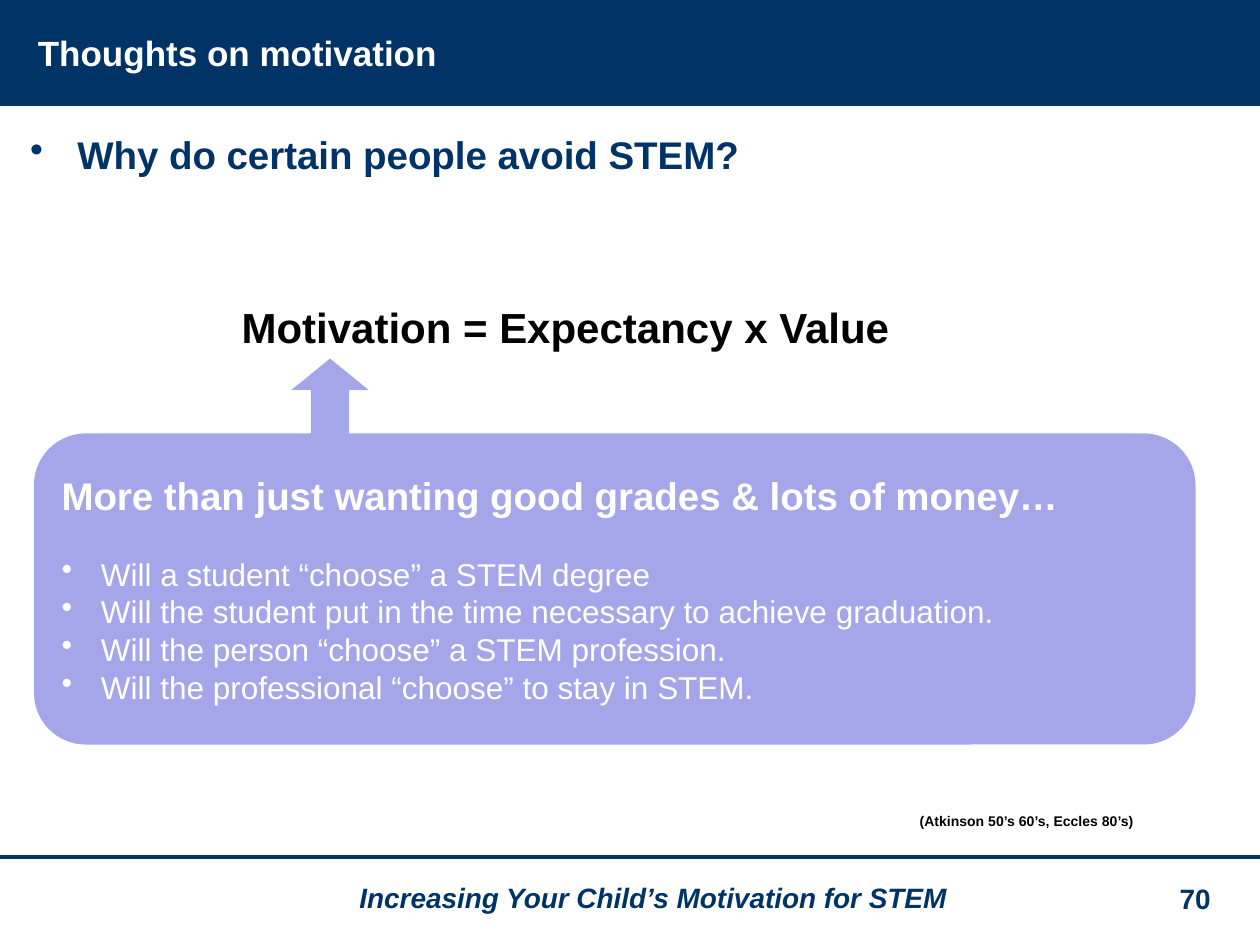
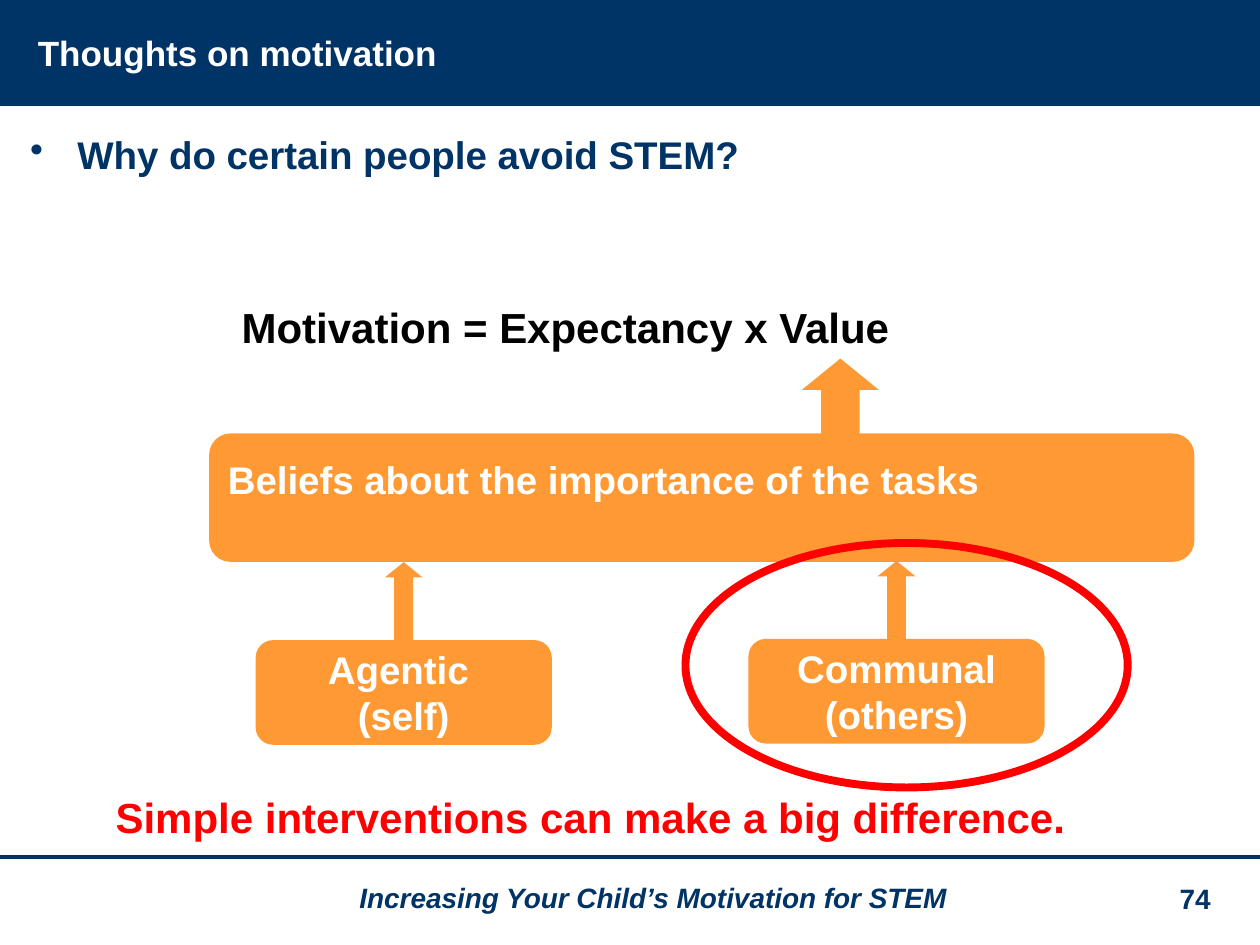
from lxml import etree
from pptx import Presentation
from pptx.dml.color import RGBColor
from pptx.enum.shapes import MSO_CONNECTOR as CONN, MSO_SHAPE as SHAPE
from pptx.enum.text import MSO_ANCHOR as ANCHOR, MSO_AUTO_SIZE as AUTO, PP_ALIGN as ALIGN
from pptx.oxml.ns import qn
from pptx.util import Pt

NAVY, WHITE, BLACK, RED = "003366", "FFFFFF", "000000", "FF0000"
LILAC, ORANGE = "A5A5E9", "FF9933"
WIDTH, HEIGHT = 720, 540
BAND = (0, 0, WIDTH, 60.5)
BODY = (10.1, 71.3, 699.8, 406.8)
FOOTER = (0, 489.6, WIDTH, 50.4)
ARROW_HEIGHT = 59


def rgb(color):
    return RGBColor.from_string(color)


def add_bullet(p, indent):
    pPr = p._p.get_or_add_pPr()
    pPr.set("marL", str(Pt(indent)))
    pPr.set("indent", str(-Pt(indent)))
    etree.SubElement(pPr, qn("a:buChar")).set("char", "•")


def write(p, text, size, color, align=ALIGN.LEFT, bullet=0, **font):
    """Fill a paragraph; bullet is its hanging indent, font holds extra font settings."""
    p.alignment = align
    if bullet:
        add_bullet(p, bullet)
    r = p.add_run()
    r.text = text
    for name, value in {"name": "Arial", "size": Pt(size), "bold": True, **font}.items():
        setattr(r.font, name, value)
    r.font.color.rgb = rgb(color)


def add_text(s, box, text, size, color, **style):
    tf = s.shapes.add_textbox(*map(Pt, box)).text_frame
    tf.word_wrap = True
    write(tf.paragraphs[0], text, size, color, **style)


def add_shape(s, kind, box, fill=None, line=None, line_width=1):
    sp = s.shapes.add_shape(kind, *map(Pt, box))
    sp.shadow.inherit = False
    if fill:
        sp.fill.solid()
        sp.fill.fore_color.rgb = rgb(fill)
    else:
        sp.fill.background()
    if line:
        sp.line.color.rgb = rgb(line)
        sp.line.width = Pt(line_width)
    else:
        sp.line.fill.background()
    return sp


def add_card(s, box, fill, lines, size=22, align=ALIGN.LEFT):
    """Add a rounded box with white bold lines and return its text frame."""
    tf = add_shape(s, SHAPE.ROUNDED_RECTANGLE, box, fill).text_frame
    tf.word_wrap = True
    tf.vertical_anchor = ANCHOR.MIDDLE
    for i, text in enumerate(lines):
        p = tf.add_paragraph() if i else tf.paragraphs[0]
        write(p, text, size, WHITE, align)
    return tf


def add_arrow(s, center, top, width, color):
    box = (center - width / 2, top, width, ARROW_HEIGHT)
    add_shape(s, SHAPE.UP_ARROW, box, color).adjustments[1] = 0.407


def add_title_band(s, box, title):
    x, y, w, h = box
    band = add_shape(s, SHAPE.RECTANGLE, box, NAVY)
    s.shapes._spTree.insert(2, band._element)
    sp = s.shapes.title
    sp.left, sp.top, sp.width, sp.height = map(Pt, (x + 14.4, y + 15.1, 432.7, h / 2))
    tf = sp.text_frame
    tf.auto_size = AUTO.NONE
    tf.vertical_anchor = ANCHOR.MIDDLE
    write(tf.paragraphs[0], title, 20, WHITE)


def add_footer(s, box, number):
    x, y, w, h = box
    rule = s.shapes.add_connector(CONN.STRAIGHT, Pt(x), Pt(y), Pt(x + w), Pt(y))
    rule.line.color.rgb = rgb(NAVY)
    rule.line.width = Pt(2)
    etree.SubElement(rule._element.spPr, qn("a:effectLst"))
    add_text(s, (x + 123.8, y + 10.1, 499, 26.6), "Increasing Your Child’s Motivation for STEM",
             16, NAVY, align=ALIGN.CENTER, italic=True)
    add_text(s, (x + 657.4, y + 10.8, 51.1, 26.6), number, 16, NAVY, align=ALIGN.CENTER)


def add_question(s, box):
    x, y, w, h = box
    add_text(s, box, "Why do certain people avoid STEM?", 22, NAVY, bullet=27)
    add_text(s, (x + 120.9, y + 97.2, 520.6, 36), "Motivation = Expectancy x Value", 24, BLACK)


def add_motivation_card(s, box):
    x, y, w, h = box
    tf = add_card(s, box, LILAC, ["More than just wanting good grades & lots of money…"])
    choices = [
        "Will a student “choose” a STEM degree",
        "Will the student put in the time necessary to achieve graduation.",
        "Will the person “choose” a STEM profession.",
        "Will the professional “choose” to stay in STEM.",
    ]
    for i, choice in enumerate(choices):
        p = tf.add_paragraph()
        if i == 0:
            p.space_before = Pt(20.7)
        write(p, choice, 18, WHITE, bullet=22.5, bold=False)
    add_arrow(s, x + 169.2, y - 42.8, 43.9, LILAC)


def add_value_tree(s, box):
    """Add the beliefs bar across the top of the box, with its two sources below."""
    x, y, w, h = box
    bar = add_card(s, (x, y, w, 73.4), ORANGE, ["Beliefs about the importance of the tasks"])
    bar.margin_bottom = Pt(24.3)
    add_arrow(s, x + 360.7, y - 42.8, 43.9, ORANGE)
    card_w, card_h = 169.2, 59.8
    sources = [(26.6, 118.1, ["Agentic ", "(self)"]),
               (308.2, 117.4, ["Communal", "(others)"])]
    for dx, dy, lines in sources:
        add_arrow(s, x + dx + card_w / 2, y + dy - 44.6, 21.6, ORANGE)
        add_card(s, (x + dx, y + dy, card_w, card_h), ORANGE, lines, align=ALIGN.CENTER)
    add_shape(s, SHAPE.OVAL, (x + 272.2, y + 62.6, 252.7, 139.7), line=RED, line_width=4.5)


def add_slide(prs, number):
    s = prs.slides.add_slide(prs.slide_layouts[5])
    add_title_band(s, BAND, "Thoughts on motivation")
    add_footer(s, FOOTER, number)
    add_question(s, BODY)
    return s


def main():
    prs = Presentation()
    prs.slide_width, prs.slide_height = Pt(WIDTH), Pt(HEIGHT)

    s = add_slide(prs, "70")
    add_motivation_card(s, (19.4, 247.7, 663.8, 177.8))
    add_text(s, (518.4, 460.8, 190.8, 17.3), "(Atkinson 50’s 60’s, Eccles 80’s)", 8, BLACK)

    s = add_slide(prs, "74")
    add_value_tree(s, (119.5, 247.7, 563, 177.8))
    add_text(s, (59, 448.6, 607.7, 36), "Simple interventions can make a big difference.", 24, RED)

    prs.save("out.pptx")


if __name__ == "__main__":
    main()
